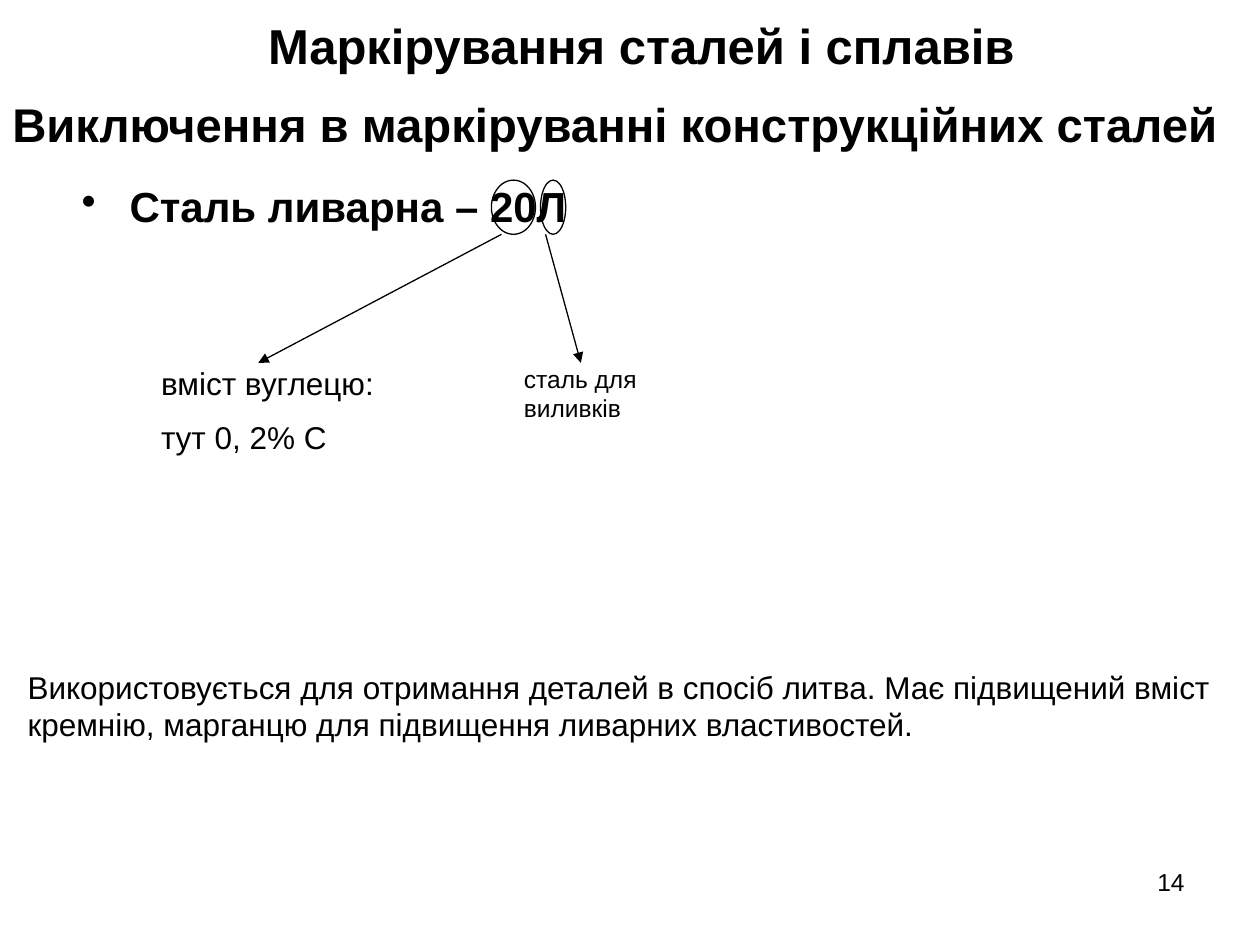
"""Build the slide on the marking of cast steel."""
from dataclasses import dataclass
from typing import Optional

import lxml.etree
import pptx
import pptx.dml.color
import pptx.enum.shapes
import pptx.enum.text
import pptx.oxml
import pptx.oxml.ns
import pptx.slide
import pptx.util

Inches = pptx.util.Inches
Align = pptx.enum.text.PP_ALIGN
Anchor = pptx.enum.text.MSO_ANCHOR


@dataclass(frozen=True)
class Theme:
    font: str = "Arial"
    ink: pptx.dml.color.RGBColor = pptx.dml.color.RGBColor(0, 0, 0)
    title: int = 28
    heading: int = 27
    example: int = 24
    body: int = 18
    small: int = 14
    line: float = 0.75
    hanging: float = 0.38
    heading_spacing: float = 0.9
    paragraph_gap: int = 9


@dataclass(frozen=True)
class Label:
    left: float
    top: float
    width: float
    height: float
    lines: tuple[str, ...]
    size: int
    bold: bool = False
    align: Align = Align.LEFT
    anchor: Anchor = Anchor.TOP
    hanging: bool = False
    bullet: Optional[str] = None


@dataclass(frozen=True)
class Mark:
    left: float
    width: float
    arrow_start: float
    arrow_end: float


THEME = Theme()
MARK_TOP, MARK_HEIGHT = 1.43, 0.43
ARROW_TOP, ARROW_BOTTOM = MARK_TOP + MARK_HEIGHT, 2.88
NOTE_TOP = 2.84

LABELS = (
    Label(0.59, 0.21, 9, 0.3, ("Маркірування сталей і сплавів",), THEME.title,
          bold=True, align=Align.CENTER, anchor=Anchor.MIDDLE),
    Label(0, 0.76, 10, 0.46, ("Виключення в маркіруванні конструкційних сталей",),
          THEME.heading, bold=True, hanging=True),
    Label(0.55, MARK_TOP, 4.25, 0.46, ("Сталь ливарна – 20Л",), THEME.example,
          bold=True, hanging=True, bullet="•"),
    Label(1.18, NOTE_TOP, 2.6, 0.85, ("вміст вуглецю:", "тут 0, 2% С"), THEME.body),
    Label(4.06, NOTE_TOP, 1.46, 0.57, ("сталь для виливків",), THEME.small),
    Label(0.12, 5.25, 9.69, 0.7,
          ("Використовується для отримання деталей в спосіб литва. Має підвищений вміст "
           "кремнію, марганцю для підвищення ливарних властивостей.",), THEME.body),
    Label(7.17, 6.83, 2.33, 0.52, ("14",), THEME.small, align=Align.RIGHT),
)
MARKS = (
    Mark(3.9, 0.35, arrow_start=3.98, arrow_end=2.05),
    Mark(4.29, 0.2, arrow_start=4.33, arrow_end=4.61),
)


def add_label(page: pptx.slide.Slide, label: Label) -> None:
    """Add a text box with one paragraph for each line of the label."""
    box = page.shapes.add_textbox(Inches(label.left), Inches(label.top),
                                  Inches(label.width), Inches(label.height))
    frame = box.text_frame
    frame.word_wrap = True
    frame.vertical_anchor = label.anchor
    for index, line in enumerate(label.lines):
        para = frame.add_paragraph() if index else frame.paragraphs[0]
        para.alignment = label.align
        if index:
            para.space_before = pptx.util.Pt(THEME.paragraph_gap)
        if label.hanging:
            para.line_spacing = THEME.heading_spacing
            properties = para._p.get_or_add_pPr()
            properties.set("marL", str(Inches(THEME.hanging)))
            properties.set("indent", str(Inches(-THEME.hanging)))
            if label.bullet:
                bullet = lxml.etree.SubElement(properties, pptx.oxml.ns.qn("a:buChar"))
                bullet.set("char", label.bullet)
        span = para.add_run()
        span.text = line
        span.font.name = THEME.font
        span.font.size = pptx.util.Pt(label.size)
        span.font.bold = label.bold
        span.font.color.rgb = THEME.ink


def add_mark(page: pptx.slide.Slide, mark: Mark) -> None:
    """Circle a part of the steel grade and point an arrow at its meaning."""
    ring = page.shapes.add_shape(pptx.enum.shapes.MSO_SHAPE.OVAL, Inches(mark.left),
                                 Inches(MARK_TOP), Inches(mark.width), Inches(MARK_HEIGHT))
    ring.shadow.inherit = False
    ring.fill.background()
    arrow = page.shapes.add_connector(pptx.enum.shapes.MSO_CONNECTOR.STRAIGHT,
                                      Inches(mark.arrow_start), Inches(ARROW_TOP),
                                      Inches(mark.arrow_end), Inches(ARROW_BOTTOM))
    for outlined in (ring, arrow):
        outlined.line.color.rgb = THEME.ink
        outlined.line.width = pptx.util.Pt(THEME.line)
    head = lxml.etree.SubElement(arrow.line._get_or_add_ln(), pptx.oxml.ns.qn("a:tailEnd"))
    head.set("type", "triangle")
    lxml.etree.SubElement(arrow._element.spPr, pptx.oxml.ns.qn("a:effectLst"))


def main() -> None:
    """Build the deck and save it."""
    deck = pptx.Presentation()
    deck.slide_width, deck.slide_height = Inches(10), Inches(7.5)
    page = deck.slides.add_slide(deck.slide_layouts[6])
    for label in LABELS:
        add_label(page, label)
    for mark in MARKS:
        add_mark(page, mark)
    deck.save("out.pptx")


if __name__ == "__main__":
    main()
